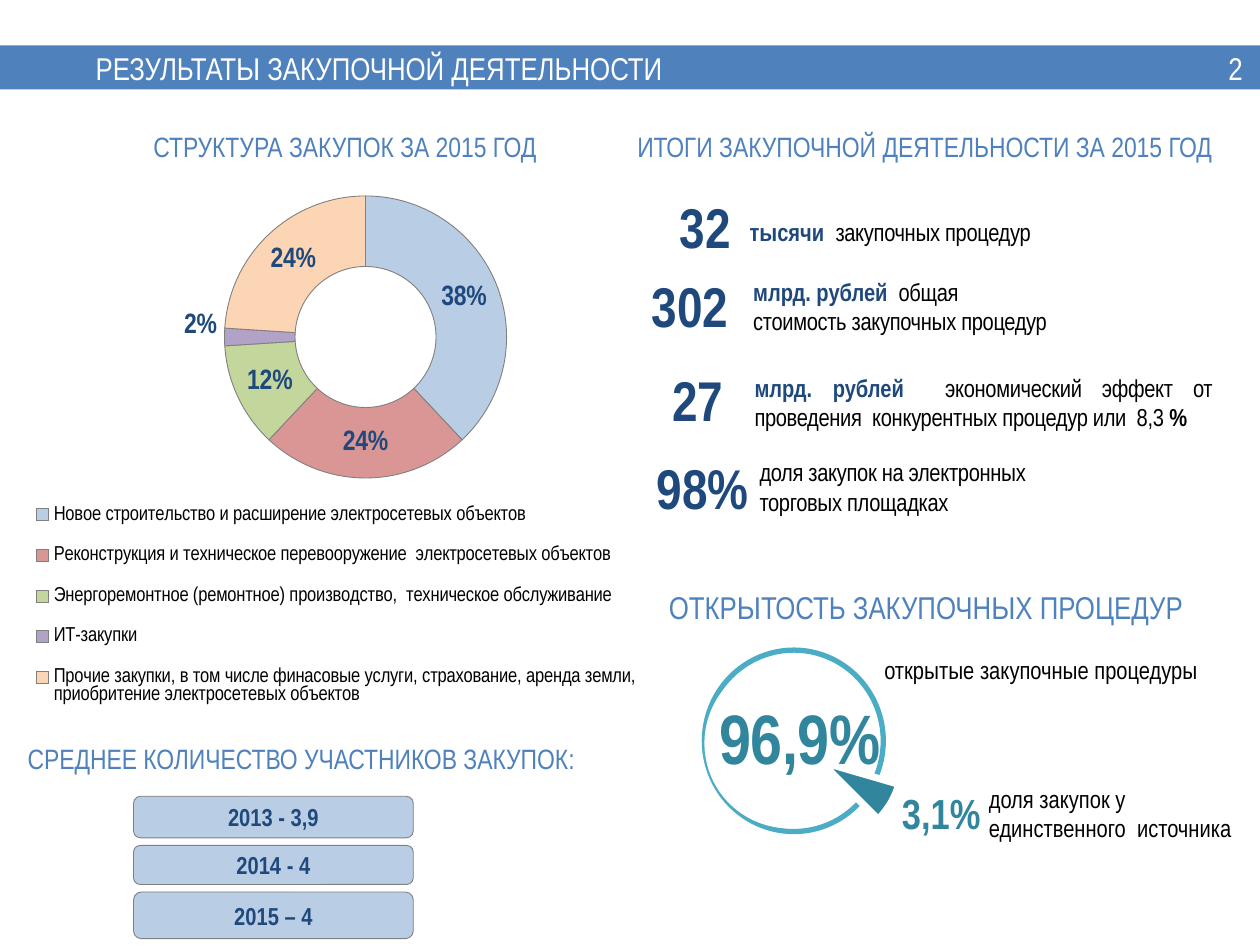
import pptx
import pptx.chart.data
import pptx.dml.color
import pptx.enum.chart
import pptx.enum.shapes
import pptx.enum.text
import pptx.oxml
import pptx.oxml.ns
import pptx.util

Inches, Pt = pptx.util.Inches, pptx.util.Pt
Shape = pptx.enum.shapes.MSO_SHAPE
Align = pptx.enum.text.PP_ALIGN
Chart = pptx.enum.chart.XL_CHART_TYPE
FONT = "Arial Narrow"
BLUE, NAVY, TEAL, BLACK, WHITE = "4F81BD", "1F497D", "31859C", "000000", "FFFFFF"
PALE, GRAY = "B9CDE5", "808080"

TITLE = ("РЕЗУЛЬТАТЫ ЗАКУПОЧНОЙ ДЕЯТЕЛЬНОСТИ", (0.66, 0.35, 8.26, 0.38))
PAGE_NUMBER = ("2", (9.65, 0.34, 0.63, 0.4))
HEADINGS = [
    ("СТРУКТУРА ЗАКУПОК ЗА 2015 ГОД", (1.12, 0.98, 3.46, 0.37), 16),
    ("ИТОГИ ЗАКУПОЧНОЙ ДЕЯТЕЛЬНОСТИ ЗА 2015 ГОД", (4.96, 0.98, 4.97, 0.37), 16),
    ("ОТКРЫТОСТЬ ЗАКУПОЧНЫХ ПРОЦЕДУР", (5.21, 4.62, 4.49, 0.4), 18),
    ("СРЕДНЕЕ КОЛИЧЕСТВО УЧАСТНИКОВ ЗАКУПОК:", (0.12, 5.84, 5.48, 0.63), 16),
]
KEY = {"color": NAVY, "bold": True}
PLAIN = {"color": BLACK, "spacing": -20}
RESULTS = [
    ("32", (4.23, 1.48, 1.67, 0.64), (5.85, 1.67, 3.72, 0.34),
     [[("тысячи  ", KEY), ("закупочных процедур", PLAIN)]]),
    ("302", (4.21, 2.11, 1.67, 0.64), (5.88, 2.15, 3.1, 0.57),
     [[("млрд. рублей ", KEY), (" общая ", PLAIN)], [("стоимость закупочных процедур", PLAIN)]]),
    ("27", (4.92, 2.85, 0.92, 0.64), (5.89, 2.91, 3.83, 0.57),
     [[("млрд. рублей  ", KEY),
       ("экономический эффект от проведения  конкурентных процедур или  8,3 ", PLAIN),
       ("%", {**PLAIN, "bold": True})]]),
    ("98%", (4.92, 3.55, 1.12, 0.64), (5.93, 3.58, 3.83, 0.57),
     [[("доля закупок на электронных ", PLAIN)], [("торговых площадках", PLAIN)]]),
]
STRUCTURE = [
    ("Новое строительство и расширение электросетевых объектов", 38, PALE),
    ("Реконструкция и техническое перевооружение  электросетевых объектов", 24, "D99694"),
    ("Энергоремонтное (ремонтное) производство,  техническое обслуживание", 12, "C3D69B"),
    ("ИТ-закупки", 2, "B3A2C7"),
    ("Прочие закупки, в том числе финасовые услуги, страхование, аренда земли, "
     "приобритение электросетевых объектов", 24, "FCD5B5"),
]
OPENNESS = [("1", 92, WHITE), ("2", 8, TEAL)]
OPEN_NOTES = [
    ([["открытые закупочные процедуры"]], (6.92, 5.15, 3.2, 0.34)),
    ([["доля закупок у"], ["единственного  источника"]], (7.75, 6.17, 2.33, 0.57)),
]
PARTICIPANTS = [("2013 - 3,9", 6.32, 0.33), ("2014 - 4", 6.71, 0.31), ("2015 – 4", 7.08, 0.37)]


def rgb(value):
    """Turn a hex string into a colour."""
    return pptx.dml.color.RGBColor.from_string(value)


def place(rect):
    """Turn inches into lengths."""
    return [Inches(value) for value in rect]


def set_font(font, size, color, bold=False, name=FONT):
    """Apply the font values."""
    for key, value in {"name": name, "size": Pt(size), "bold": bold}.items():
        setattr(font, key, value)
    font.color.rgb = rgb(color)


def write(frame, paragraphs, size, align=Align.LEFT, anchor="TOP", **style):
    """Fill a text frame with paragraphs of (text, style) runs."""
    values = {"word_wrap": True, "vertical_anchor": getattr(pptx.enum.text.MSO_ANCHOR, anchor)}
    for key, value in values.items():
        setattr(frame, key, value)
    for index, runs in enumerate(paragraphs):
        para = frame.add_paragraph() if index else frame.paragraphs[0]
        para.alignment = align
        for text, own in runs:
            span = para.add_run()
            span.text = text
            look = {**style, **own}
            set_font(span.font, size, look["color"], look.get("bold", False))
            if "spacing" in look:
                span._r.get_or_add_rPr().set("spc", str(look["spacing"]))


def add_text(page, rect, paragraphs, size, **style):
    """Add a text box."""
    box = page.shapes.add_textbox(*place(rect))
    write(box.text_frame, paragraphs, size, **style)
    return box


def add_shape(page, kind, rect, fill, line=None, width=0.5):
    """Add a flat preset shape."""
    shape = page.shapes.add_shape(kind, *place(rect))
    shape.shadow.inherit = False
    shape.fill.solid()
    shape.fill.fore_color.rgb = rgb(fill)
    if line:
        shape.line.color.rgb = rgb(line)
        shape.line.width = Pt(width)
    else:
        shape.line.fill.background()
    return shape


def chart_xml(tag, inner="", value=None):
    """Make one chart element."""
    attribute = "" if value is None else f' val="{value}"'
    return pptx.oxml.parse_xml(
        f'<c:{tag} {pptx.oxml.ns.nsdecls("c")}{attribute}>{inner}</c:{tag}>')


def layout(target=False, **values):
    """Make a manual layout, placed from the chart edge when it has a size."""
    inner = '<c:layoutTarget val="inner"/>' if target else ""
    if "w" in values:
        inner += '<c:xMode val="edge"/><c:yMode val="edge"/>'
    inner += "".join(f'<c:{key} val="{value}"/>' for key, value in values.items())
    return chart_xml("layout", f"<c:manualLayout>{inner}</c:manualLayout>")


def add_round_chart(page, kind, rect, rows, plot, line, width, font):
    """Add a pie or doughnut chart with coloured points."""
    data = pptx.chart.data.CategoryChartData()
    data.categories = [row[0] for row in rows]
    data.add_series("Series 1", [row[1] for row in rows])
    chart = page.shapes.add_chart(kind, *place(rect), data).chart
    chart.has_title = chart.has_legend = False
    set_font(chart.font, 18, BLACK, name=font)
    chart.plots[0].vary_by_categories = True
    series = chart.plots[0].series[0]
    for index, row in enumerate(rows):
        form = series.points[index].format
        form.fill.solid()
        form.fill.fore_color.rgb = rgb(row[2])
        form.line.color.rgb = rgb(line)
        form.line.width = Pt(width)
    area = chart._chartSpace.xpath(".//c:plotArea")[0]
    for old in area.xpath("./c:layout"):
        area.remove(old)
    area.insert(0, layout(True, **dict(zip("xywh", plot))))
    return chart


def add_structure(page):
    """Add the doughnut with percent labels and its legend."""
    chart = add_round_chart(page, Chart.DOUGHNUT, (0.13, 1.38, 5.23, 4.39), STRUCTURE,
                            (0.29, 0.04, 0.48, 0.51), GRAY, 0.5, FONT)
    series = chart.plots[0].series[0]
    labels = series.data_labels
    values = {"show_percentage": True, "show_value": False,
              "number_format": "0%", "number_format_is_linked": False}
    for key, value in values.items():
        setattr(labels, key, value)
    set_font(labels.font, 16, NAVY, True)
    set_font(series.points[3].data_label.font, 16, NAVY, True)
    label = chart._chartSpace.xpath(".//c:dLbl")[0]
    label.xpath("./c:idx")[0].addnext(layout(x=-0.09, y=-0.02))
    for tag, shown in (("showVal", "0"), ("showPercent", "1")):
        label.xpath(f"./c:{tag}")[0].set("val", shown)
    chart.has_legend = True
    chart.legend.position = pptx.enum.chart.XL_LEGEND_POSITION.BOTTOM
    chart.legend.include_in_layout = False
    set_font(chart.legend.font, 11.5, BLACK)
    legend = chart._chartSpace.xpath(".//c:legend")[0]
    for old in legend.xpath("./c:layout"):
        legend.remove(old)
    legend.xpath("./c:overlay")[0].addprevious(layout(x=0, y=0.56, w=0.97, h=0.44))


def add_openness(page):
    """Add the ring and the pie with its pulled-out slice."""
    add_shape(page, Shape.OVAL, (5.59, 5.16, 1.42, 1.44), WHITE, "4BACC6", 3)
    chart = add_round_chart(page, Chart.PIE, (4.87, 5.02, 2.88, 1.76), OPENNESS,
                            (0.26, 0.13, 0.45, 0.74), WHITE, 4, "Calibri")
    space = chart._chartSpace
    space.xpath(".//c:pieChart")[0].append(chart_xml("firstSliceAng", value=135))
    space.xpath(".//c:dPt/c:idx[@val='1']")[0].addnext(chart_xml("explosion", value=44))


def main():
    """Build the slide."""
    deck = pptx.Presentation()
    deck.slide_width, deck.slide_height = Inches(10), Inches(7.5)
    page = deck.slides.add_slide(deck.slide_layouts[5])
    band = add_shape(page, Shape.RECTANGLE, (0, 0.36, 10, 0.35), BLUE)
    page.shapes._spTree.insert(2, band._element)
    title = page.shapes.title
    for key, value in zip(("left", "top", "width", "height"), place(TITLE[1])):
        setattr(title, key, value)
    write(title.text_frame, [[(TITLE[0], {})]], 18, anchor="MIDDLE", color=WHITE)
    add_structure(page)
    for text, rect, size in HEADINGS:
        add_text(page, rect, [[(text, {})]], size, color=BLUE)
    for number, number_rect, rect, paragraphs in RESULTS:
        add_text(page, number_rect, [[(number, KEY)]], 32, align=Align.RIGHT)
        add_text(page, rect, paragraphs, 14, align=Align.JUSTIFY)
    add_openness(page)
    for lines, rect in OPEN_NOTES:
        add_text(page, rect, [[(text, {}) for text in line] for line in lines], 14, color=BLACK)
    share = add_text(page, (5.61, 5.46, 1.49, 0.77), [[("96,9%", {"spacing": -20})]], 40,
                     color=TEAL, bold=True)
    share.text_frame.word_wrap = False
    add_text(page, (7.06, 6.2, 0.97, 0.5), [[("3,1%", {})]], 24, color=TEAL, bold=True)
    for text, top, height in PARTICIPANTS:
        box = add_shape(page, Shape.FLOWCHART_ALTERNATE_PROCESS, (1.06, top, 2.22, height),
                        PALE, GRAY)
        write(box.text_frame, [[(text, KEY)]], 14, align=Align.CENTER, anchor="MIDDLE")
    add_text(page, PAGE_NUMBER[1], [[(PAGE_NUMBER[0], {})]], 18, anchor="MIDDLE", color=WHITE)
    deck.save("out.pptx")


if __name__ == "__main__":
    main()
